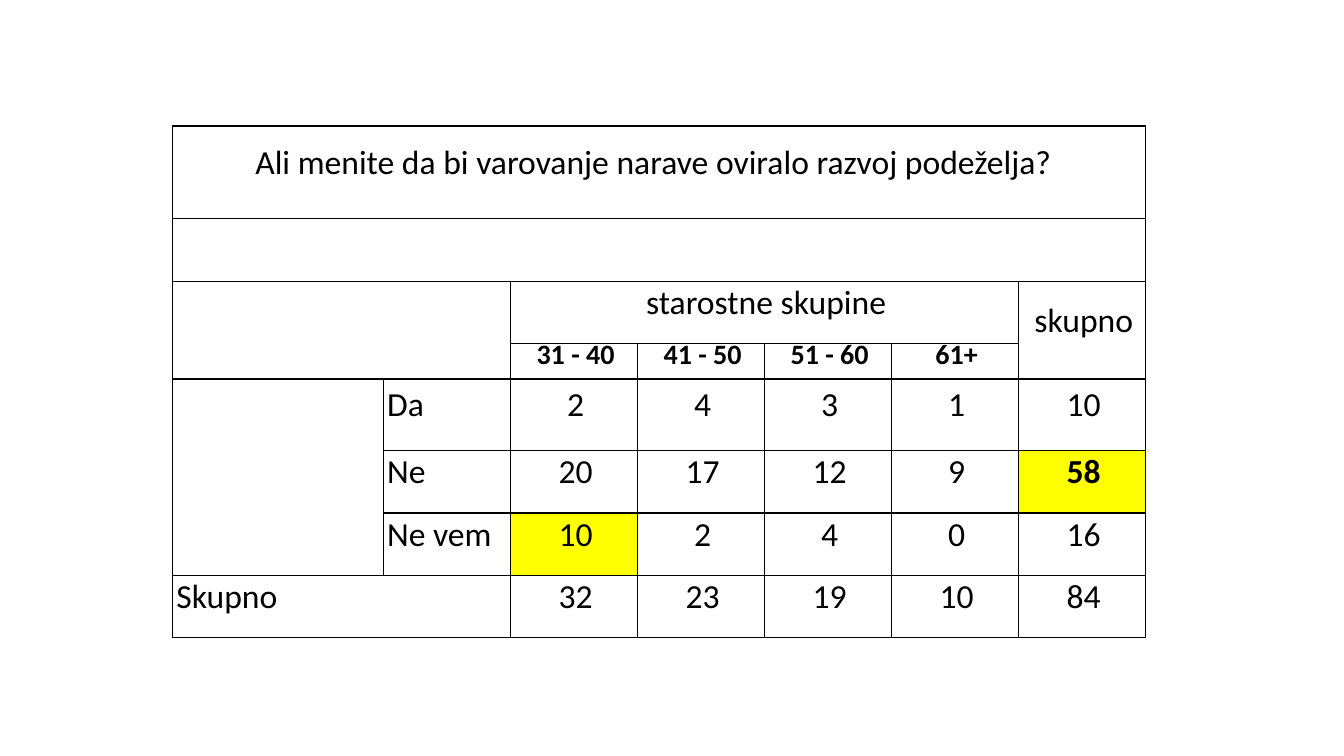
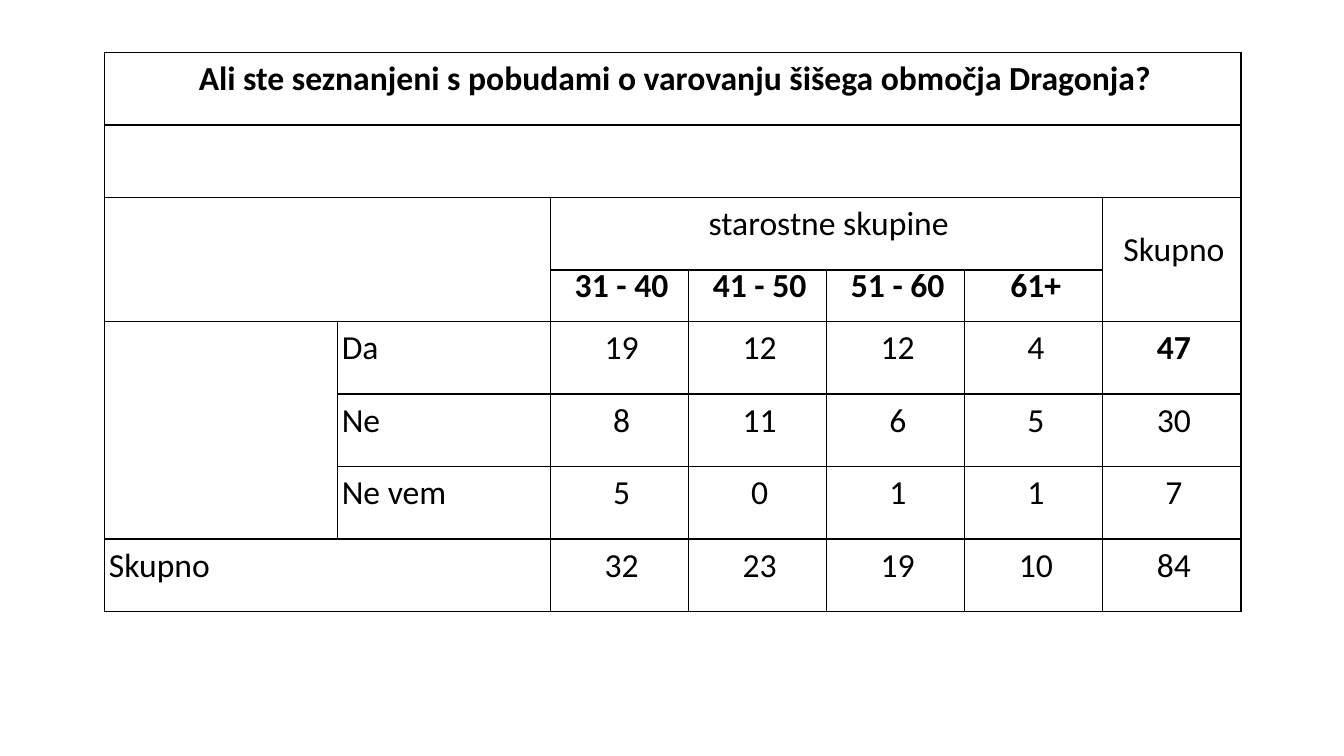
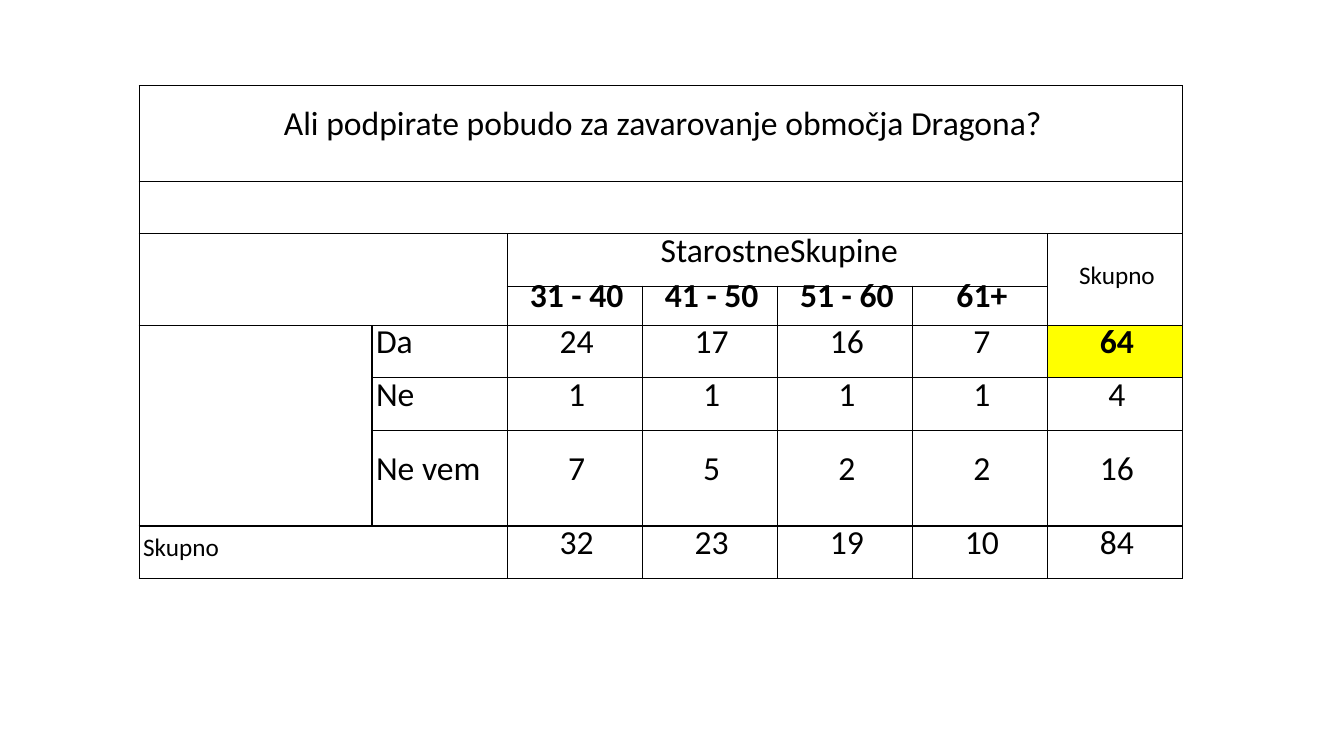
from dataclasses import dataclass
from pptx import Presentation
from pptx.dml.color import RGBColor
from pptx.enum.text import MSO_ANCHOR, PP_ALIGN
from pptx.oxml import parse_xml
from pptx.oxml.ns import nsdecls
from pptx.util import Inches, Pt

FONT = "Calibri"
BLACK, WHITE, YELLOW = "000000", "FFFFFF", "FFFF00"
AGE_GROUPS = ["31 - 40", "41 - 50", "51 - 60", "61+"]
ANSWERS = ["Da", "Ne", "Ne vem"]
GROUP_ROW, AGE_ROW, FIRST_ANSWER_ROW, TOTAL_ROW = 2, 3, 4, 7
FIRST_AGE_COLUMN, TOTAL_COLUMN = 2, 6
MERGES = [
    ((0, 0), (0, 6)), ((1, 0), (1, 6)), ((2, 0), (3, 1)), ((2, 2), (2, 5)),
    ((2, 6), (3, 6)), ((4, 0), (6, 0)), ((7, 0), (7, 1)),
]


@dataclass
class Survey:
    """One question, its counts by answer and age group, and its table's look."""
    question: str
    counts: list
    left: float
    top: float
    label_widths: tuple
    count_width: float
    row_heights: list
    group_label: str = "starostne skupine"
    total_label: str = "Skupno"
    total_label_size: int = 24
    age_size: int = 24
    question_bold: bool = False
    question_margin_right: float = 0
    bold_cells: tuple = ()
    highlighted_cells: tuple = ()


SURVEYS = [
    Survey("Ali menite da bi varovanje narave oviralo razvoj podeželja?",
           [[2, 4, 3, 1], [20, 17, 12, 9], [10, 2, 4, 0]],
           left=1.71, top=1.25, label_widths=(2.09, 1.26), count_width=1.26,
           row_heights=[0.92, 0.62, 0.62, 0.35, 0.71, 0.62, 0.62, 0.62],
           total_label="skupno", age_size=20, question_margin_right=0.15,
           bold_cells=((5, 6),), highlighted_cells=((5, 6), (6, 2))),
    Survey("Ali ste seznanjeni s pobudami o varovanju šišega območja Dragonja?",
           [[19, 12, 12, 4], [8, 11, 6, 5], [5, 0, 1, 1]],
           left=1.04, top=0.52, label_widths=(2.31, 2.11), count_width=1.37,
           row_heights=[0.72, 0.72, 0.72, 0.51, 0.72, 0.72, 0.72, 0.72],
           question_bold=True, bold_cells=((4, 6),)),
    Survey("Ali podpirate pobudo za zavarovanje območja Dragona?",
           [[24, 17, 16, 7], [1, 1, 1, 1], [7, 5, 2, 2]],
           left=1.38, top=0.85, label_widths=(2.31, 1.34), count_width=1.34,
           row_heights=[0.95, 0.52, 0.52, 0.39, 0.52, 0.52, 0.95, 0.52],
           group_label="StarostneSkupine", total_label_size=18,
           bold_cells=((4, 6),), highlighted_cells=((4, 6),)),
]


def color(hex_string):
    return RGBColor.from_string(hex_string)


def add_borders(cell):
    properties = cell._tc.get_or_add_tcPr()
    for side in ("lnL", "lnR", "lnT", "lnB"):
        properties.append(parse_xml(
            f'<a:{side} {nsdecls("a")} w="{Pt(1)}"><a:solidFill>'
            f'<a:srgbClr val="{BLACK}"/></a:solidFill></a:{side}>'))


def style_cell(cell, fill):
    add_borders(cell)
    cell.fill.solid()
    cell.fill.fore_color.rgb = color(fill)
    cell.vertical_anchor = MSO_ANCHOR.MIDDLE
    cell.margin_left = Inches(0.04)
    cell.margin_right = cell.margin_top = cell.margin_bottom = 0


def write(cell, text, size=24, bold=False, align=PP_ALIGN.CENTER):
    paragraph = cell.text_frame.paragraphs[0]
    paragraph.alignment = align
    paragraph.line_spacing = Pt(16)
    run = paragraph.add_run()
    run.text = str(text)
    run.font.name = FONT
    run.font.size = Pt(size)
    run.font.bold = bold
    run.font.color.rgb = color(BLACK)


def add_grid(slide, survey):
    """Add the bordered, merged and still empty table."""
    widths = [*survey.label_widths, *[survey.count_width] * 5]
    heights = survey.row_heights
    table = slide.shapes.add_table(
        len(heights), len(widths), Inches(survey.left), Inches(survey.top),
        Inches(sum(widths)), Inches(sum(heights))).table
    table.first_row = table.horz_banding = False
    for column, width in zip(table.columns, widths):
        column.width = Inches(width)
    for row, height in zip(table.rows, heights):
        row.height = Inches(height)
    for row in range(len(heights)):
        for column in range(len(widths)):
            highlighted = (row, column) in survey.highlighted_cells
            style_cell(table.cell(row, column), YELLOW if highlighted else WHITE)
    for start, end in MERGES:
        table.cell(*start).merge(table.cell(*end))
    return table


def write_headings(table, survey):
    question = table.cell(0, 0)
    question.margin_right = Inches(survey.question_margin_right)
    write(question, survey.question, bold=survey.question_bold)
    write(table.cell(GROUP_ROW, FIRST_AGE_COLUMN), survey.group_label)
    write(table.cell(GROUP_ROW, TOTAL_COLUMN), survey.total_label,
          size=survey.total_label_size)
    for column, age_group in enumerate(AGE_GROUPS, FIRST_AGE_COLUMN):
        write(table.cell(AGE_ROW, column), age_group, size=survey.age_size, bold=True)
    for row, answer in enumerate(ANSWERS, FIRST_ANSWER_ROW):
        write(table.cell(row, 1), answer, align=PP_ALIGN.LEFT)
    write(table.cell(TOTAL_ROW, 0), "Skupno", size=survey.total_label_size,
          align=PP_ALIGN.LEFT)


def write_counts(table, survey):
    """Write the counts with the sums of rows and columns."""
    column_sums = [sum(column) for column in zip(*survey.counts)]
    for row, counts in enumerate([*survey.counts, column_sums], FIRST_ANSWER_ROW):
        for column, count in enumerate([*counts, sum(counts)], FIRST_AGE_COLUMN):
            write(table.cell(row, column), count,
                  bold=(row, column) in survey.bold_cells)


def main():
    presentation = Presentation()
    presentation.slide_width = Inches(13.33)
    presentation.slide_height = Inches(7.5)
    blank_layout = presentation.slide_layouts[6]
    for survey in SURVEYS:
        slide = presentation.slides.add_slide(blank_layout)
        table = add_grid(slide, survey)
        write_headings(table, survey)
        write_counts(table, survey)
    presentation.save("out.pptx")


if __name__ == "__main__":
    main()
